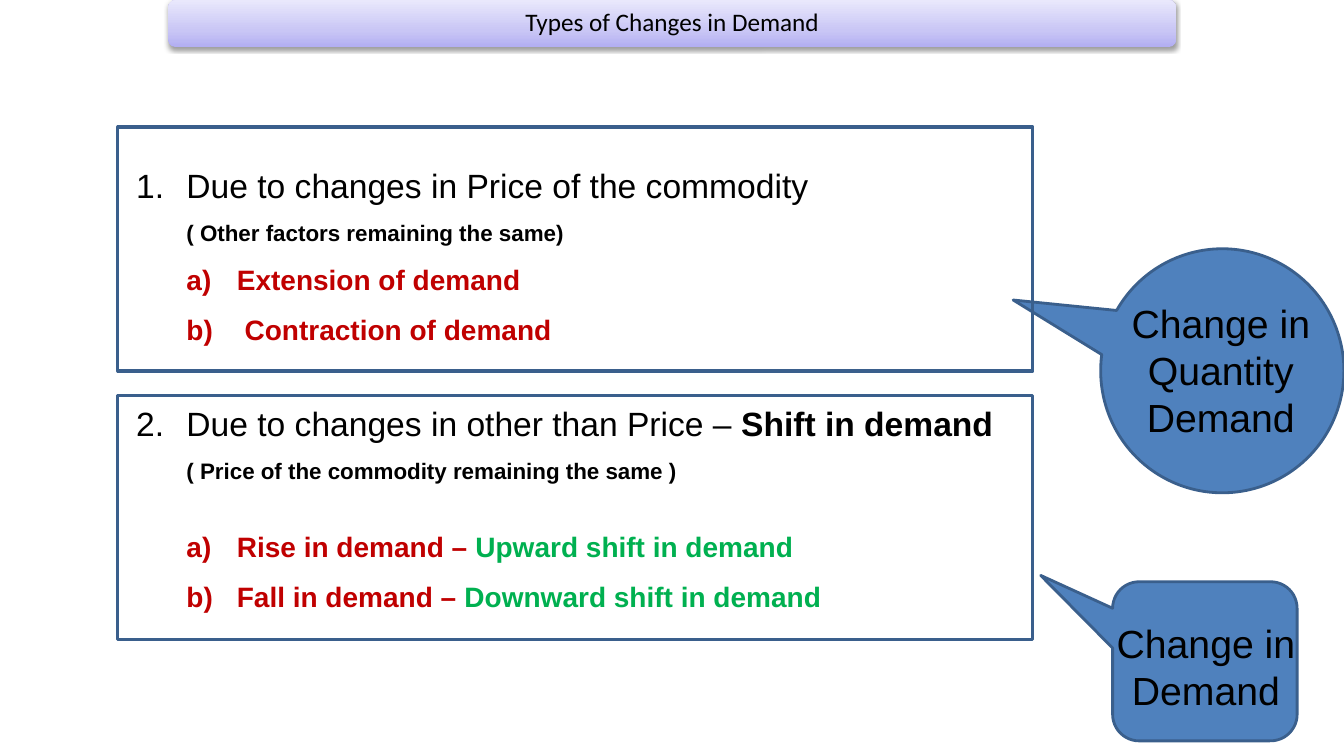
from dataclasses import dataclass
from typing import Optional

from lxml.etree import SubElement
from pptx import Presentation
from pptx.dml.color import RGBColor
from pptx.enum.shapes import MSO_SHAPE
from pptx.enum.text import MSO_ANCHOR, PP_ALIGN
from pptx.oxml import parse_xml
from pptx.oxml.ns import nsdecls, qn
from pptx.util import Cm, Pt


@dataclass(frozen=True)
class Theme:
    body_font: str = "Arial"
    title_font: str = "Calibri"
    black: str = "000000"
    red: str = "C00000"
    green: str = "00B050"
    callout: str = "4F81BD"
    outline: str = "3A5F8C"
    banner: tuple = ((0, "B2AEF2"), (35, "C9C6F5"), (100, "E9E8FC"))
    title_size: int = 18
    heading_size: int = 24
    note_size: int = 16
    item_size: int = 20
    callout_size: int = 28


THEME = Theme()


@dataclass(frozen=True)
class Run:
    text: str
    color: str = THEME.black
    bold: bool = True


@dataclass(frozen=True)
class Line:
    runs: tuple
    size: int
    level: int = 0
    numbering: Optional[str] = None
    start: int = 1
    space_before: float = 0


@dataclass(frozen=True)
class Box:
    left: float
    top: float
    width: float
    height: float

    def lengths(self) -> tuple:
        return Cm(self.left), Cm(self.top), Cm(self.width), Cm(self.height)


@dataclass(frozen=True)
class Callout:
    kind: MSO_SHAPE
    box: Box
    tail: tuple
    text: str
    text_box: Box


def heading(*runs: Run, start: int = 1, space_before: float = 0) -> Line:
    return Line(runs, THEME.heading_size, numbering="arabicPeriod", start=start,
                space_before=space_before)


def note(text: str) -> Line:
    return Line((Run(text),), THEME.note_size)


def item(text: str, shift: str = "", space_before: float = 0) -> Line:
    runs = (Run(text, THEME.red),) + ((Run(shift, THEME.green),) if shift else ())
    return Line(runs, THEME.item_size, 1, "alphaLcParenR", space_before=space_before)


LINES = (
    heading(Run("Due to changes in Price of the commodity", bold=False)),
    note("( Other factors remaining the same)"),
    item("Extension of demand"),
    item(" Contraction of demand"),
    heading(Run("Due to changes in other than Price – ", bold=False),
            Run("Shift in demand"), start=2, space_before=25.9),
    note("( Price of the commodity remaining the same )"),
    item("Rise in demand – ", "Upward shift in demand", space_before=20.7),
    item("Fall in demand – ", "Downward shift in demand"),
)
QUANTITY_CALLOUT = Callout(
    MSO_SHAPE.OVAL_CALLOUT, Box(27.74, 6.27, 6.13, 6.15), (-0.86, -0.29),
    "Change in Quantity Demand", Box(27.67, 7.42, 6.19, 3.84))
DEMAND_CALLOUT = Callout(
    MSO_SHAPE.ROUNDED_RECTANGULAR_CALLOUT, Box(28.04, 14.66, 4.65, 4.01), (-0.89, -0.54),
    "Change in Demand", Box(27.2, 15.47, 6.38, 2.64))
FRAMES = tuple(Box(2.97, top, 23.06, 6.15) for top in (3.2, 9.96))


def add_run(paragraph, text: str, *, size: int, font: str = THEME.body_font,
            color: str = THEME.black, bold: bool = False) -> None:
    run = paragraph.add_run()
    run.text = text
    run.font.name = font
    run.font.size = Pt(size)
    run.font.bold = bold
    run.font.color.rgb = RGBColor.from_string(color)


def add_shape(slide, kind: MSO_SHAPE, box: Box, *, fill: Optional[str] = None,
              line_width: float = 0):
    shape = slide.shapes.add_shape(kind, *box.lengths())
    shape.shadow.inherit = False
    if fill:
        shape.fill.solid()
        shape.fill.fore_color.rgb = RGBColor.from_string(fill)
    else:
        shape.fill.background()
    if line_width:
        shape.line.color.rgb = RGBColor.from_string(THEME.outline)
        shape.line.width = Pt(line_width)
    else:
        shape.line.fill.background()
    return shape


def add_text_box(slide, box: Box):
    frame = slide.shapes.add_textbox(*box.lengths()).text_frame
    frame.word_wrap = True
    return frame


def add_callout(slide, callout: Callout) -> None:
    shape = add_shape(slide, callout.kind, callout.box, fill=THEME.callout, line_width=2)
    for index, offset in enumerate(callout.tail):
        shape.adjustments[index] = offset


def add_callout_text(slide, callout: Callout) -> None:
    paragraph = add_text_box(slide, callout.text_box).paragraphs[0]
    paragraph.alignment = PP_ALIGN.CENTER
    add_run(paragraph, callout.text, size=THEME.callout_size)


def add_banner(slide) -> None:
    banner = add_shape(slide, MSO_SHAPE.ROUNDED_RECTANGLE, Box(4.24, 0, 25.4, 1.19))
    properties = banner.fill._xPr
    stops = "".join(f'<a:gs pos="{position * 1000}"><a:srgbClr val="{color}"/></a:gs>'
                    for position, color in THEME.banner)
    gradient = parse_xml(f'<a:gradFill {nsdecls("a")}><a:gsLst>{stops}</a:gsLst>'
                         '<a:lin ang="16200000" scaled="0"/></a:gradFill>')
    properties.replace(properties.find(qn("a:noFill")), gradient)
    shadow = SubElement(properties.find(qn("a:effectLst")), qn("a:outerShdw"),
                        blurRad=str(Pt(3.1)), dist=str(Pt(1.6)), dir="5400000",
                        rotWithShape="0")
    color = SubElement(shadow, qn("a:srgbClr"), val=THEME.black)
    SubElement(color, qn("a:alpha"), val="38000")
    frame = banner.text_frame
    frame.vertical_anchor = MSO_ANCHOR.MIDDLE
    frame.margin_top = frame.margin_bottom = Cm(0.18)
    paragraph = frame.paragraphs[0]
    paragraph.alignment = PP_ALIGN.CENTER
    paragraph.line_spacing = 0.9
    add_run(paragraph, "Types of Changes in Demand", size=THEME.title_size,
            font=THEME.title_font)


def add_line(paragraph, line: Line) -> None:
    """Fill one paragraph, with a hanging number when the line is numbered."""
    paragraph.level = line.level
    paragraph.line_spacing = 1.5
    paragraph.space_before = Pt(line.space_before)
    properties = paragraph._p.get_or_add_pPr()
    properties.set("marL", str(Cm(1.27 * (line.level + 1))))
    properties.set("indent", str(Cm(-1.27 if line.numbering else 0)))
    if line.numbering:
        number = SubElement(properties, qn("a:buAutoNum"), type=line.numbering)
        if line.start > 1:
            number.set("startAt", str(line.start))
    for run in line.runs:
        add_run(paragraph, run.text, size=line.size, color=run.color, bold=run.bold)


def add_body(slide) -> None:
    frame = add_text_box(slide, Box(3.18, 3.53, 24.77, 13.79))
    for index, line in enumerate(LINES):
        add_line(frame.add_paragraph() if index else frame.paragraphs[0], line)


def main() -> None:
    presentation = Presentation()
    presentation.slide_width, presentation.slide_height = Cm(33.87), Cm(19.05)
    slide = presentation.slides.add_slide(presentation.slide_layouts[6])
    add_callout(slide, QUANTITY_CALLOUT)
    add_body(slide)
    add_banner(slide)
    add_callout_text(slide, QUANTITY_CALLOUT)
    for frame in FRAMES:
        add_shape(slide, MSO_SHAPE.RECTANGLE, frame, line_width=2.25)
    add_callout(slide, DEMAND_CALLOUT)
    add_callout_text(slide, DEMAND_CALLOUT)
    presentation.save("out.pptx")


if __name__ == "__main__":
    main()
